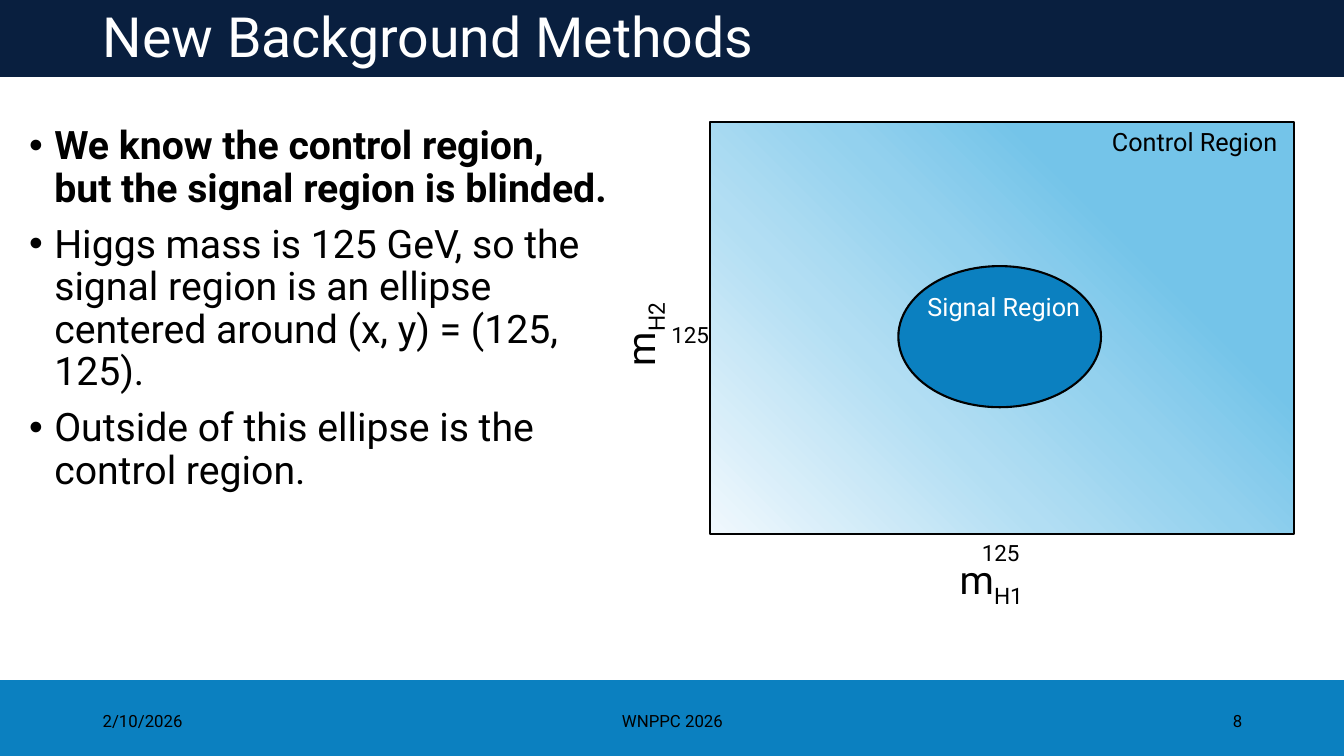
from lxml import etree
from pptx import Presentation
from pptx.dml.color import RGBColor
from pptx.enum.shapes import MSO_SHAPE as Preset
from pptx.enum.text import MSO_ANCHOR as Anchor, PP_ALIGN as Align
from pptx.oxml.ns import qn
from pptx.util import Inches, Pt

NAVY = RGBColor(0x09, 0x1F, 0x3F)
BLUE = RGBColor(0x0B, 0x80, 0xC0)
BLACK = RGBColor(0, 0, 0)
WHITE = RGBColor(0xFF, 0xFF, 0xFF)
CONTROL_STOPS = [
    (0, RGBColor(0xF0, 0xF8, 0xFD)),
    (34, RGBColor(0xB2, 0xDE, 0xF3)),
    (54, RGBColor(0x93, 0xD1, 0xEE)),
    (72, RGBColor(0x74, 0xC4, 0xE9)),
    (100, RGBColor(0x74, 0xC4, 0xE9)),
    (100, RGBColor(0xA2, 0xD8, 0xF0)),
]
FONT = "Roboto"
WIDTH, HEIGHT = 13.33, 7.5
BAR_HEIGHT = 0.74
MARGIN = 0.92


def add_run(paragraph, text, size, color=BLACK, bold=False):
    run = paragraph.add_run()
    run.text = text
    run.font.name = FONT
    run.font.size = Pt(size)
    run.font.color.rgb = color
    run.font.bold = bold
    return run


def add_text_box(slide, box, anchor=Anchor.TOP):
    shape = slide.shapes.add_textbox(*map(Inches, box))
    shape.text_frame.word_wrap = True
    shape.text_frame.vertical_anchor = anchor
    return shape


def add_label(slide, box, text, size, color=BLACK, align=Align.LEFT, anchor=Anchor.TOP):
    shape = add_text_box(slide, box, anchor)
    paragraph = shape.text_frame.paragraphs[0]
    paragraph.alignment = align
    add_run(paragraph, text, size, color)
    return shape


def add_axis_label(slide, box, subscript, rotation=0):
    shape = add_label(slide, box, "m", 28)
    shape.rotation = rotation
    run = add_run(shape.text_frame.paragraphs[0], subscript, 28)
    run.font._element.set("baseline", "-25000")


def add_region(slide, preset, box, fill, line):
    shape = slide.shapes.add_shape(preset, *map(Inches, box))
    shape.shadow.inherit = False
    shape.fill.solid()
    shape.fill.fore_color.rgb = fill
    shape.line.color.rgb = line
    shape.line.width = Pt(1.5)
    return shape


def set_gradient(shape, stops, angle):
    shape.fill.gradient()
    shape.fill.gradient_angle = angle
    stop_list = shape._element.spPr.find(qn("a:gradFill")).find(qn("a:gsLst"))
    for stop in list(stop_list):
        stop_list.remove(stop)
    for percent, color in stops:
        stop = etree.SubElement(stop_list, qn("a:gs"), pos=str(percent * 1000))
        etree.SubElement(stop, qn("a:srgbClr"), val=str(color))


def add_header(slide, box, text):
    add_region(slide, Preset.RECTANGLE, box, NAVY, NAVY)
    left, top, width, height = box
    title = slide.shapes.title
    slide.shapes._spTree.append(title._element)  # bring the title above its bar
    title.left, title.top = Inches(left + MARGIN), Inches(top + 0.02)
    title.width, title.height = Inches(11.5), Inches(height - 0.01)
    title.text_frame.word_wrap = True
    title.text_frame.vertical_anchor = Anchor.MIDDLE
    paragraph = title.text_frame.paragraphs[0]
    paragraph.alignment = Align.LEFT
    paragraph.line_spacing = 0.9
    add_run(paragraph, text, 39.6, WHITE)


def add_footer(slide, box, date, event, number):
    add_region(slide, Preset.RECTANGLE, box, BLUE, BLUE)
    left, top, width, height = box
    fields = [
        (MARGIN, 3, date, Align.LEFT),
        (4.42, 4.5, event, Align.CENTER),
        (9.42, 3, number, Align.RIGHT),
    ]
    for offset, field_width, text, align in fields:
        field_box = (left + offset, top + 0.19, field_width, 0.4)
        add_label(slide, field_box, text, 12, align=align, anchor=Anchor.MIDDLE)


def add_bullets(slide, box, items):
    frame = add_text_box(slide, box).text_frame
    for index, (text, bold) in enumerate(items):
        paragraph = frame.add_paragraph() if index else frame.paragraphs[0]
        properties = paragraph._p.get_or_add_pPr()
        properties.set("marL", str(Inches(0.25)))
        properties.set("indent", str(-Inches(0.25)))
        etree.SubElement(properties, qn("a:buFont"), typeface="Arial")
        etree.SubElement(properties, qn("a:buChar"), char="•")
        paragraph.line_spacing = 0.9
        if index:
            paragraph.space_before = Pt(10)
        add_run(paragraph, text, 28, bold=bold)


def add_mass_plane(slide, box):
    left, top, width, height = box
    add_region(slide, Preset.RECTANGLE, box, WHITE, WHITE)

    # Control region and the ellipse inside it
    plane = (left + 0.85, top + 0.31, 5.79, 4.09)
    control = add_region(slide, Preset.RECTANGLE, plane, WHITE, BLACK)
    set_gradient(control, CONTROL_STOPS, 45)
    add_region(slide, Preset.OVAL, (left + 2.72, top + 1.74, 2.01, 1.4), BLUE, BLACK)
    add_label(slide, (left + 4.74, top + 0.3, 2.22, 0.4), "Control Region", 18)
    add_label(slide, (left + 2.91, top + 1.94, 1.72, 0.4), "Signal Region", 18, WHITE)

    # Axis names and the Higgs mass on each axis
    add_axis_label(slide, (left - 0.93, top + 1.36, 2.27, 0.67), "H2", 270)
    add_axis_label(slide, (left + 3.23, top + 4.56, 2.22, 0.68), "H1")
    for x, y in [(0.37, 2.24), (3.45, 4.4)]:
        add_label(slide, (left + x, top + y, 0.59, 0.37), "125", 16)


def main():
    presentation = Presentation()
    presentation.slide_width = Inches(WIDTH)
    presentation.slide_height = Inches(HEIGHT)
    slide = presentation.slides.add_slide(presentation.slide_layouts[5])

    footer_box = (0, HEIGHT - BAR_HEIGHT, WIDTH, BAR_HEIGHT)
    add_footer(slide, footer_box, "2/10/2026", "WNPPC 2026", "8")
    add_header(slide, (0, 0.01, WIDTH, BAR_HEIGHT), "New Background Methods")
    add_bullets(slide, (0.19, 1.2, 5.95, 4.92), [
        ("We know the control region, but the signal region is blinded.", True),
        ("Higgs mass is 125 GeV, so the signal region is an ellipse "
         "centered around (x, y) = (125, 125).", False),
        ("Outside of this ellipse is the control region.", False),
    ])
    add_mass_plane(slide, (6.19, 0.9, 6.99, 5.14))

    presentation.save("out.pptx")


if __name__ == "__main__":
    main()
